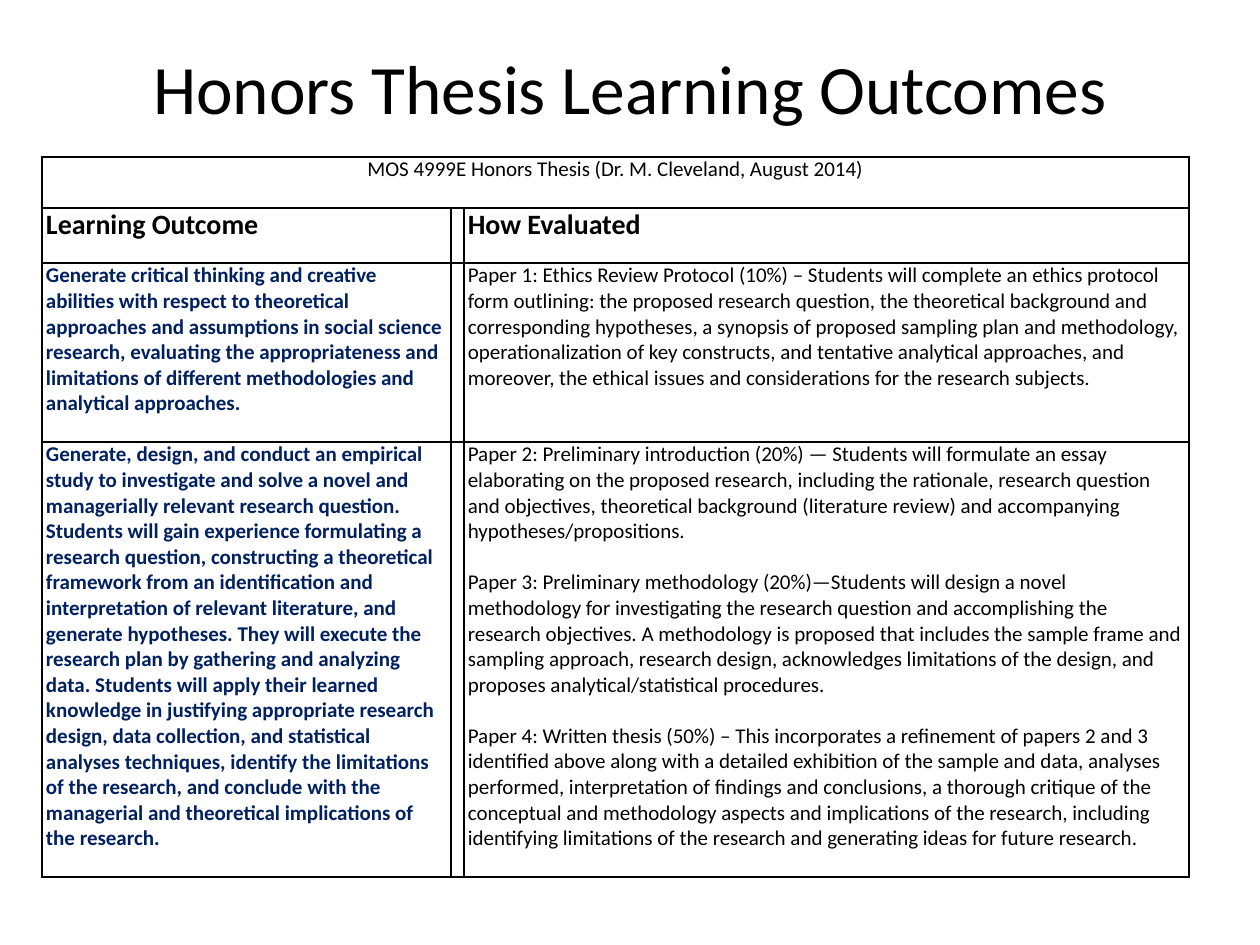
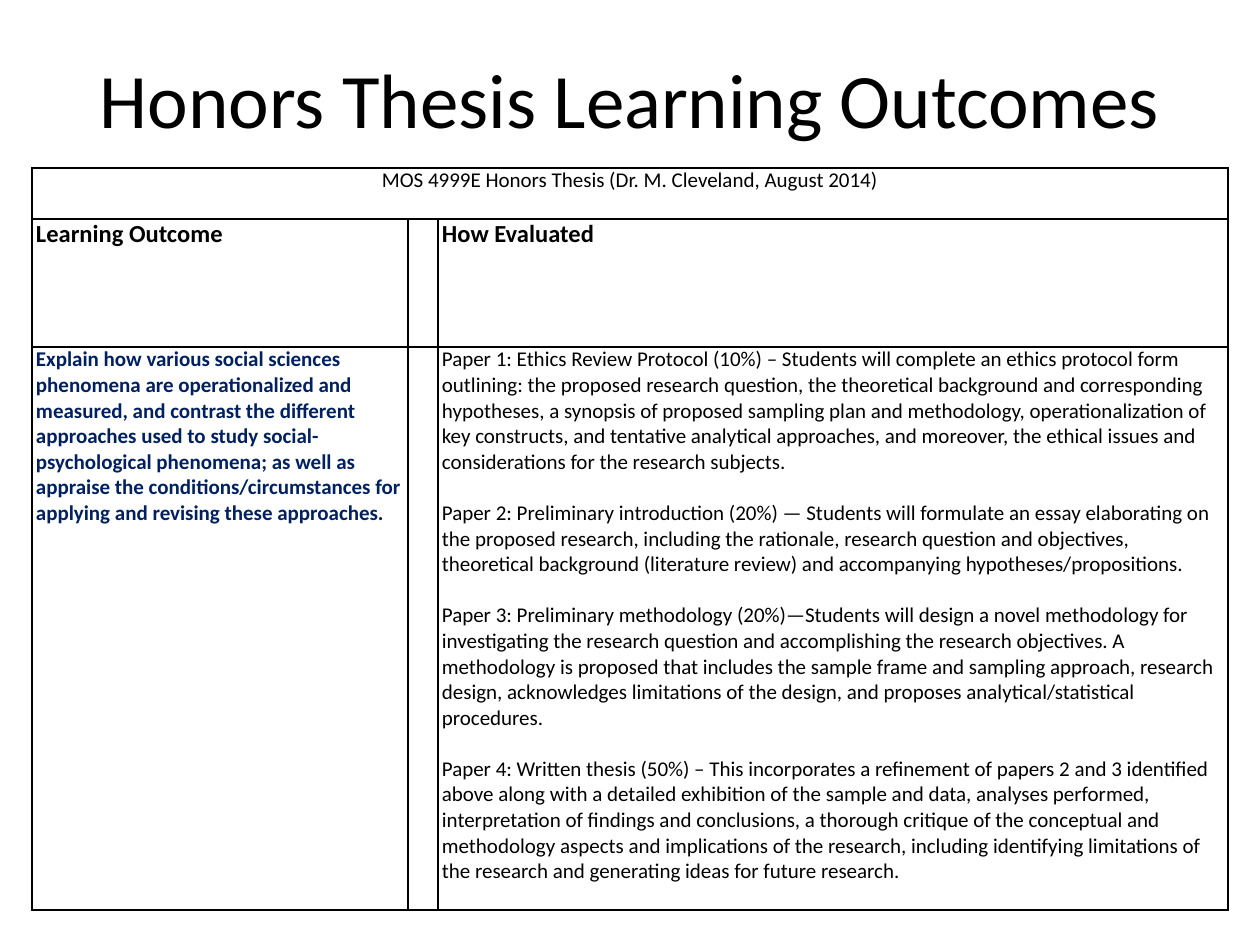
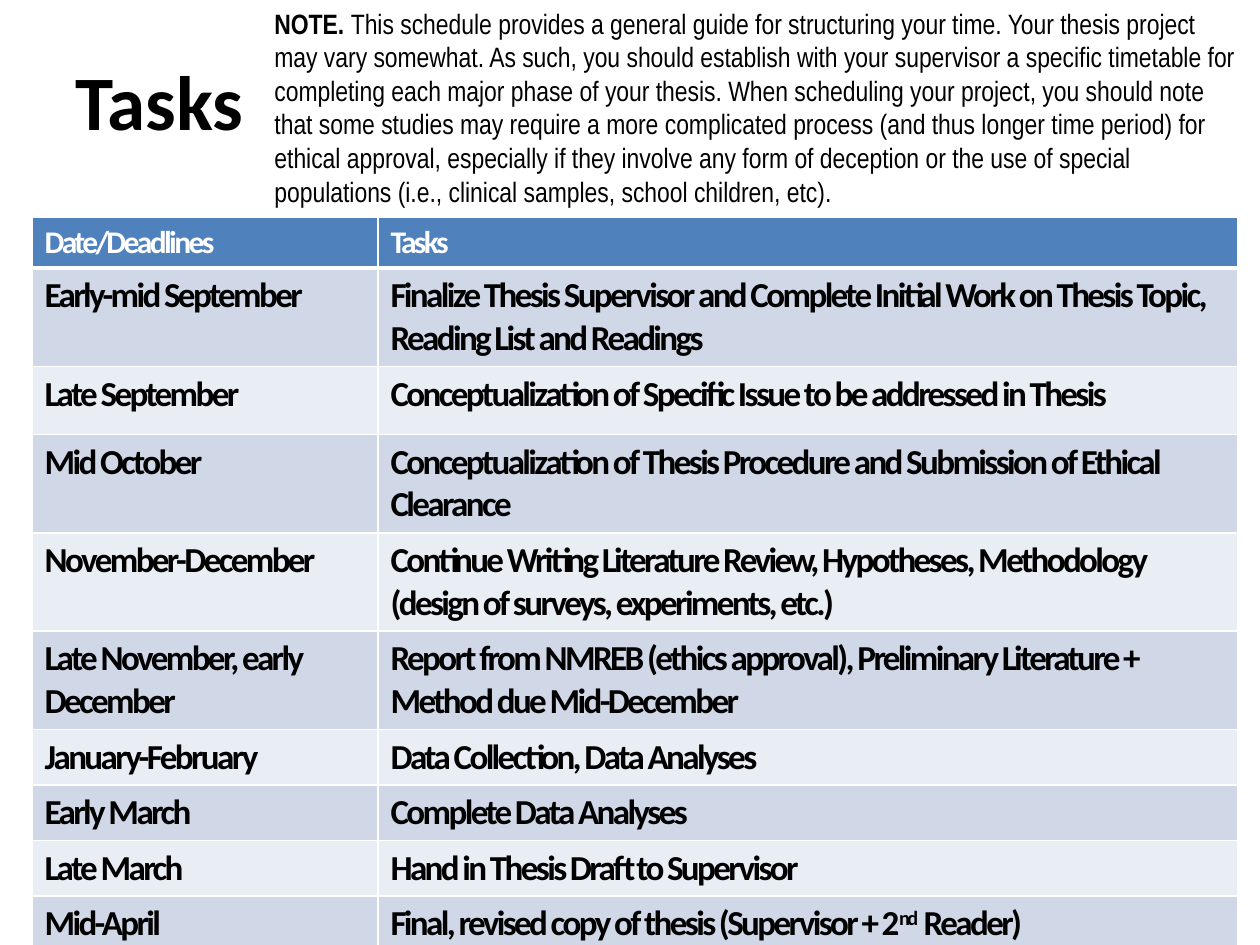
"""Build three slides on honors thesis outcomes and the task schedule."""
from lxml import etree
from pptx import Presentation
from pptx.dml.color import RGBColor
from pptx.enum.text import MSO_ANCHOR, MSO_AUTO_SIZE, PP_ALIGN
from pptx.oxml.ns import qn
from pptx.util import Emu, Pt

LEFT, CENTER = PP_ALIGN.LEFT, PP_ALIGN.CENTER
MIDDLE, FIXED = MSO_ANCHOR.MIDDLE, MSO_AUTO_SIZE.NONE
SCALE = 914400 / 126
BLACK, WHITE, NAVY, BLUE = "000000", "FFFFFF", "002060", "4F81BD"
BANDS = ["E9EDF4", "D0D8E8"]

HEAD = "Honors Thesis Learning Outcomes"
COURSE = "MOS 4999E Honors Thesis (Dr. M. Cleveland, August 2014)"
LABELS = ["Learning Outcome", "How Evaluated"]
PAPERS = [
    "Paper 1: Ethics Review Protocol (10%) – Students will complete an ethics protocol form "
    "outlining: the proposed research question, the theoretical background and corresponding "
    "hypotheses, a synopsis of proposed sampling plan and methodology, operationalization of key "
    "constructs, and tentative analytical approaches, and moreover, the ethical issues and "
    "considerations for the research subjects.",
    "Paper 2: Preliminary introduction (20%) — Students will formulate an essay elaborating on the "
    "proposed research, including the rationale, research question and objectives, theoretical "
    "background (literature review) and accompanying hypotheses/propositions.",
    "Paper 3: Preliminary methodology (20%)—Students will design a novel methodology for "
    "investigating the research question and accomplishing the research objectives. A methodology "
    "is proposed that includes the sample frame and sampling approach, research design, "
    "acknowledges limitations of the design, and proposes analytical/statistical procedures.",
    "Paper 4: Written thesis (50%) – This incorporates a refinement of papers 2 and 3 identified "
    "above along with a detailed exhibition of the sample and data, analyses performed, "
    "interpretation of findings and conclusions, a thorough critique of the conceptual and "
    "methodology aspects and implications of the research, including identifying limitations of "
    "the research and generating ideas for future research.",
]
THINK = (
    "Generate critical thinking and creative abilities with respect to theoretical approaches and "
    "assumptions in social science research, evaluating the appropriateness and limitations of "
    "different methodologies and analytical approaches."
)
STUDY = (
    "Generate, design, and conduct an empirical study to investigate and solve a novel and "
    "managerially relevant research question. Students will gain experience formulating a research "
    "question, constructing a theoretical framework from an identification and interpretation of "
    "relevant literature, and generate hypotheses. They will execute the research plan by "
    "gathering and analyzing data. Students will apply their learned knowledge in justifying "
    "appropriate research design, data collection, and statistical analyses techniques, identify "
    "the limitations of the research, and conclude with the managerial and theoretical "
    "implications of the research."
)
EXPLAIN = (
    "Explain how various social sciences phenomena are operationalized and measured, and contrast "
    "the different approaches used to study social-psychological phenomena; as well as appraise "
    "the conditions/circumstances for applying and revising these approaches."
)
NOTE = (
    "This schedule provides a general guide for structuring your time. Your thesis project may "
    "vary somewhat. As such, you should establish with your supervisor a specific timetable for "
    "completing each major phase of your thesis. When scheduling your project, you should note "
    "that some studies may require a more complicated process (and thus longer time period) for "
    "ethical approval, especially if they involve any form of deception or the use of special "
    "populations (i.e., clinical samples, school children, etc)."
)
TASKS = [
    (50, "Date/Deadlines", "Tasks"),
    (98, "Early-mid September", "Finalize Thesis Supervisor and Complete Initial Work on Thesis "
     "Topic, Reading List and Readings"),
    (68, "Late September", "Conceptualization of Specific Issue to be addressed in Thesis"),
    (98, "Mid October", "Conceptualization of Thesis Procedure and Submission of Ethical Clearance"),
    (98, "November-December", "Continue Writing Literature Review, Hypotheses, Methodology "
     "(design of surveys, experiments, etc.)"),
    (98, "Late November, early December", "Report from NMREB (ethics approval), Preliminary "
     "Literature + Method due Mid-December"),
    (55, "January-February", "Data Collection, Data Analyses"),
    (55, "Early March", "Complete Data Analyses"),
    (55, "Late March", "Hand in Thesis Draft to Supervisor"),
    (55, "Mid-April", "Final, revised copy of thesis (Supervisor + 2^nd^ Reader)"),
]


def px(n):
    return Emu(round(n * SCALE))


def color(code):
    return RGBColor.from_string(code)


class Deck:
    def __init__(self):
        self.prs = Presentation()
        self.prs.slide_width, self.prs.slide_height = px(1260), px(945)

    def style(self, para, size, ink=BLACK, bold=False, align=LEFT, face="Calibri"):
        para.alignment = align
        font = para.font
        font.name, font.size, font.bold = face, Pt(size), bold
        font.color.rgb = color(ink)

    def slide(self, text, top, height, size, bold=False, align=CENTER):
        self.page = self.prs.slides.add_slide(self.prs.slide_layouts[5])
        title = self.page.shapes.title
        title.left, title.top, title.width, title.height = map(px, (63, top, 1134, height))
        frame = title.text_frame
        frame.text = text
        frame.auto_size, frame.vertical_anchor = FIXED, MIDDLE
        self.style(frame.paragraphs[0], size, bold=bold, align=align)

    def note(self, box, lead, text):
        frame = self.page.shapes.add_textbox(*map(px, box)).text_frame
        frame.word_wrap = True
        para = frame.paragraphs[0]
        self.style(para, 16, face="Arial Narrow")
        first = para.add_run()
        first.text, first.font.bold = lead, True
        para.add_run().text = text

    def table(self, left, top, cols, rows):
        shape = self.page.shapes.add_table(
            len(rows), len(cols), *map(px, (left, top, sum(cols), sum(rows))))
        grid = shape.table
        grid.first_row = grid.horz_banding = False
        for col, width in zip(grid.columns, cols):
            col.width = px(width)
        for row, height in zip(grid.rows, rows):
            row.height = px(height)
        return grid

    def border(self, cell, ink, top=1, bottom=1):
        props = cell._tc.get_or_add_tcPr()
        sides = {"L": 1, "R": 1, "T": top, "B": bottom}
        for spot, (side, width) in enumerate(sides.items()):
            line = etree.Element(qn(f"a:ln{side}"), w=str(Pt(width)))
            fill = etree.SubElement(line, qn("a:solidFill"))
            etree.SubElement(fill, qn("a:srgbClr"), val=ink)
            props.insert(spot, line)

    def fill_text(self, cell, texts, size, gap=0, track=0, **look):
        frame = cell.text_frame
        for i, text in enumerate(texts):
            para = frame.add_paragraph() if i else frame.paragraphs[0]
            self.style(para, size, **look)
            if i:
                para.space_before = Pt(gap)
            if track:
                para._p.get_or_add_pPr().get_or_add_defRPr().set("spc", str(track))
            for j, part in enumerate(text.split("^")):
                run = para.add_run()
                run.text = part
                if j % 2:
                    run._r.get_or_add_rPr().set("baseline", "30000")

    def goals(self, left, top, cols, rows, size, items):
        grid = self.table(left, top, cols, rows)
        for cell in grid.iter_cells():
            cell.fill.background()
            cell.margin_left = cell.margin_right = px(4)
            cell.margin_top = cell.margin_bottom = 0
            self.border(cell, BLACK)
        grid.cell(0, 0).merge(grid.cell(0, 2))
        self.fill_text(grid.cell(0, 0), [COURSE], 12, align=CENTER)
        for col, label in zip((0, 2), LABELS):
            self.fill_text(grid.cell(1, col), [label], size, bold=True)
        for row, (goal, papers) in enumerate(items, 2):
            self.fill_text(grid.cell(row, 0), [goal], 12, ink=NAVY, bold=True)
            self.fill_text(grid.cell(row, 2), papers, 12, gap=14.6)

    def plan(self, left, top, cols, tasks):
        grid = self.table(left, top, cols, [task[0] for task in tasks])
        for row, task in enumerate(tasks):
            size, ink, fill = (20, BLACK, BANDS[row % 2]) if row else (18, WHITE, BLUE)
            for col, text in enumerate(task[1:]):
                cell = grid.cell(row, col)
                cell.fill.solid()
                cell.fill.fore_color.rgb = color(fill)
                self.border(cell, WHITE, 3 if row == 1 else 1, 1 if row else 3)
                self.fill_text(cell, [text], size, track=-150, ink=ink, bold=True)


def main():
    deck = Deck()
    deck.slide(HEAD, 38, 98, 39.6)
    deck.goals(42, 157, [409, 12, 725], [51, 55, 179, 435], 16,
               [(THINK, PAPERS[:1]), (STUDY, PAPERS[1:])])
    deck.slide(HEAD, 38, 120, 44)
    deck.goals(32, 168, [376, 30, 790], [51, 128, 563], 14, [(EXPLAIN, PAPERS)])
    deck.slide("Tasks", 21, 158, 44, bold=True, align=LEFT)
    deck.plan(32, 217, [346, 860], TASKS)
    deck.note((262, 0, 987, 217), "NOTE. ", NOTE)
    deck.prs.save("out.pptx")


if __name__ == "__main__":
    main()
